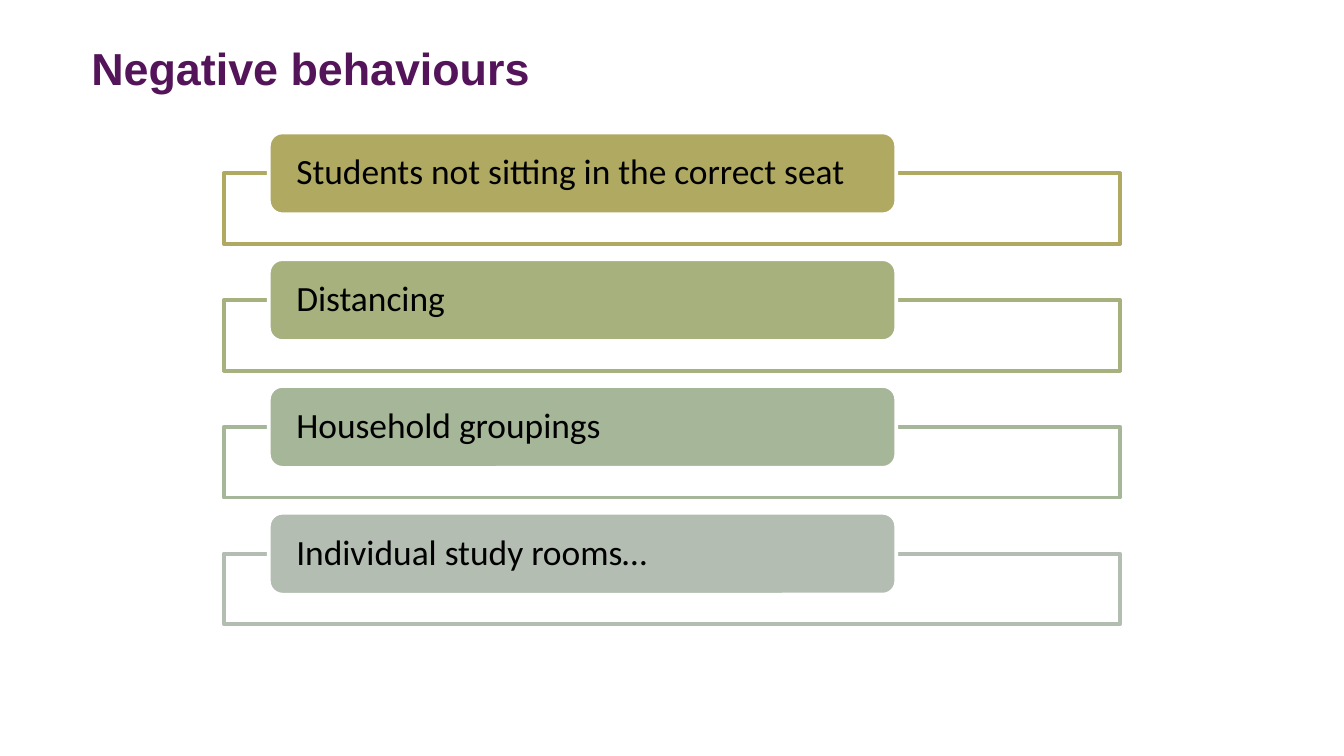
import dataclasses

import lxml.etree
import pptx
import pptx.dml.color
import pptx.enum.shapes
import pptx.enum.text
import pptx.oxml.ns
import pptx.util

PX = 4572
SHAPES = pptx.enum.shapes.MSO_SHAPE
ANCHOR = pptx.enum.text.MSO_ANCHOR
ALIGN = pptx.enum.text.PP_ALIGN


@dataclasses.dataclass(frozen=True)
class Theme:
    title_font: str = "Arial"
    label_font: str = "Calibri"
    title_size: int = 24
    label_size: int = 19
    outline: int = 2
    title: str = "54145A"
    label: str = "000000"
    paper: str = "FFFFFF"
    accents: tuple = ("AFA961", "A6B17E", "A6B699", "B3BDB1")


THEME = Theme()
BEHAVIOURS = (
    "Students not sitting in the correct seat",
    "Distancing",
    "Household groupings",
    "Individual study rooms…",
)


def rgb(code):
    return pptx.dml.color.RGBColor.from_string(code)


def place(part, box):
    part.left, part.top, part.width, part.height = (round(n * PX) for n in box)


def style_font(paragraph, name, size, color, bold=False):
    paragraph.font.name = name
    paragraph.font.size = pptx.util.Pt(size)
    paragraph.font.color.rgb = rgb(color)
    paragraph.font.bold = bold


def set_frame(frame, anchor, inset=0):
    frame.word_wrap = True
    frame.auto_size = pptx.enum.text.MSO_AUTO_SIZE.NONE
    frame.vertical_anchor = anchor
    frame.margin_left = frame.margin_right = inset * PX
    frame.margin_top = frame.margin_bottom = 0


def add_box(slide, kind, box, fill, line):
    shape = slide.shapes.add_shape(kind, *(round(n * PX) for n in box))
    shape.shadow.inherit = False
    shape.fill.solid()
    shape.fill.fore_color.rgb = rgb(fill)
    shape.line.color.rgb = rgb(line)
    shape.line.width = pptx.util.Pt(THEME.outline)
    return shape


def add_title(slide, box, text):
    title = slide.shapes.title
    place(title, box)
    set_frame(title.text_frame, ANCHOR.TOP)
    title.text_frame.text = text
    heading = title.text_frame.paragraphs[0]
    heading.alignment = ALIGN.LEFT
    style_font(heading, THEME.title_font, THEME.title_size, THEME.title, True)


def add_behaviour(slide, box, text, accent):
    left, top, width, height = box
    frame = add_box(slide, SHAPES.RECTANGLE, (left, top + 61, width, height - 61),
                    THEME.paper, accent)
    frame_color = frame.fill._xPr.find(".//" + pptx.oxml.ns.qn("a:srgbClr"))
    lxml.etree.SubElement(frame_color, pptx.oxml.ns.qn("a:alpha"), val="90000")

    label = add_box(slide, SHAPES.ROUNDED_RECTANGLE, (left + 67, top, width * 0.7, 122),
                    accent, THEME.paper)
    set_frame(label.text_frame, ANCHOR.MIDDLE, 35)
    label.text_frame.text = text
    wording = label.text_frame.paragraphs[0]
    wording.alignment = ALIGN.LEFT
    wording.line_spacing = 0.9
    style_font(wording, THEME.label_font, THEME.label_size, THEME.label)


def add_behaviour_list(slide, box, behaviours):
    left, top, width, height = box
    item_height = 166
    pitch = (height - item_height) / (len(behaviours) - 1)
    for row, (text, accent) in enumerate(zip(behaviours, THEME.accents)):
        add_behaviour(slide, (left, top + row * pitch, width, item_height), text, accent)


def main():
    deck = pptx.Presentation()
    deck.slide_width, deck.slide_height = 2000 * PX, 1125 * PX
    slide = deck.slides.add_slide(deck.slide_layouts[5])
    add_title(slide, (136, 60, 1728, 188), "Negative behaviours")
    add_behaviour_list(slide, (333, 197, 1334, 732), BEHAVIOURS)
    deck.save("out.pptx")


if __name__ == "__main__":
    main()
